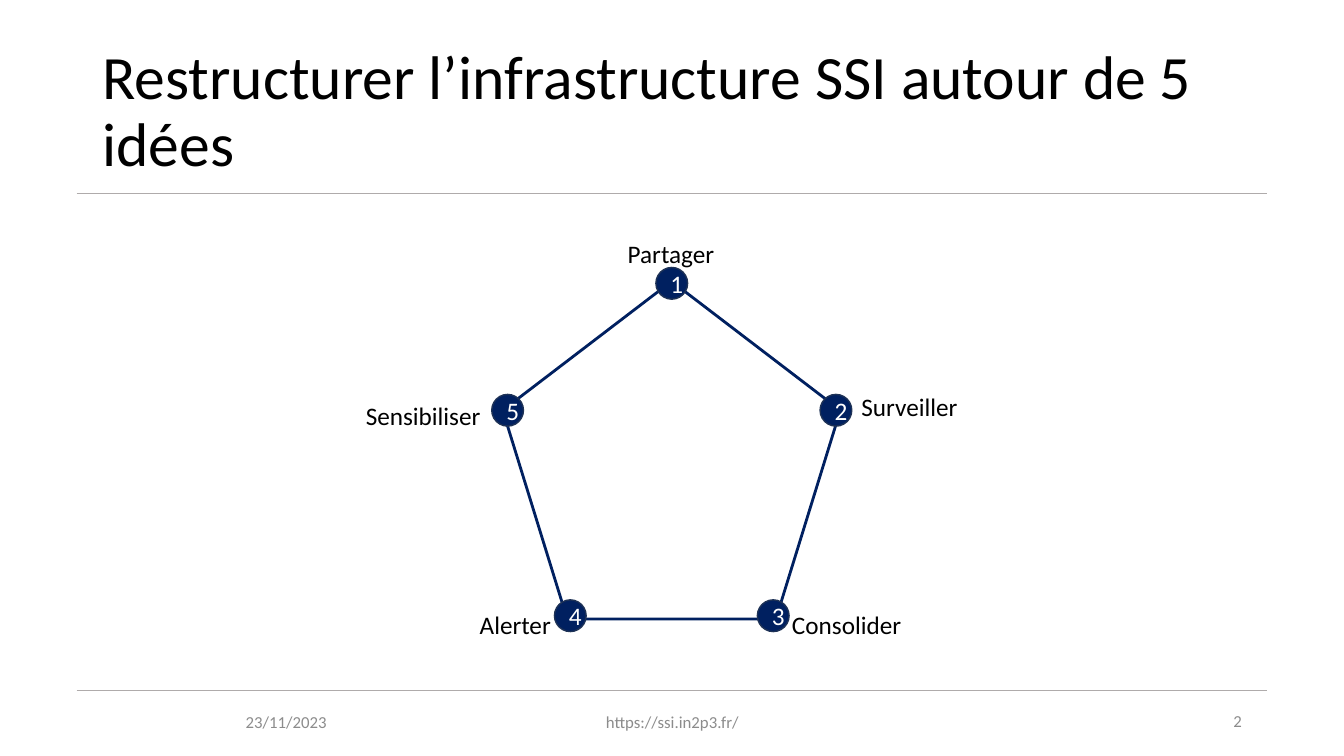
import math
from dataclasses import dataclass

from lxml import etree
from pptx import Presentation
from pptx import util as u
from pptx.dml.color import RGBColor
from pptx.enum import shapes, text
from pptx.oxml.ns import qn


@dataclass(frozen=True)
class Theme:
    font: str = "Calibri"
    ink: str = "000000"
    paper: str = "FFFFFF"
    navy: str = "002060"
    navy_edge: str = "1E3256"
    rule: str = "AFABAB"
    muted: str = "8C8C8C"
    title_size: int = 44
    body_size: int = 18
    footer_size: int = 12


class SlideBuilder:
    def __init__(self, prs, theme):
        self.theme = theme
        self.slide = prs.slides.add_slide(prs.slide_layouts[5])

    def set_text(self, sp, content, size, color, align=text.PP_ALIGN.LEFT,
                 anchor=text.MSO_ANCHOR.MIDDLE, wrap=True):
        tf = sp.text_frame
        tf.text = content
        tf.word_wrap = wrap
        tf.vertical_anchor = anchor
        p = tf.paragraphs[0]
        p.alignment = align
        font = p.runs[0].font
        font.name = self.theme.font
        font.size = u.Pt(size)
        font.color.rgb = RGBColor.from_string(color)
        return p

    def title(self, content, left, top, width, height):
        sp = self.slide.shapes.title
        sp.left, sp.top, sp.width, sp.height = map(u.Cm, (left, top, width, height))
        p = self.set_text(sp, content, self.theme.title_size, self.theme.ink)
        sp.text_frame.auto_size = text.MSO_AUTO_SIZE.NONE
        p.line_spacing = 0.9

    def rule(self, left, right, y):
        line = self.slide.shapes.add_connector(
            shapes.MSO_CONNECTOR.STRAIGHT, *map(u.Cm, (left, y, right, y)))
        line.line.color.rgb = RGBColor.from_string(self.theme.rule)
        line.line.width = u.Pt(1)
        etree.SubElement(line._element.spPr, qn("a:effectLst"))

    def shape(self, kind, left, top, width, height, fill, edge, weight):
        sp = self.slide.shapes.add_shape(kind, *map(u.Cm, (left, top, width, height)))
        sp.shadow.inherit = False
        sp.fill.solid()
        sp.fill.fore_color.rgb = RGBColor.from_string(fill)
        sp.line.color.rgb = RGBColor.from_string(edge)
        sp.line.width = u.Pt(weight)
        return sp

    def node(self, number, x, y, size=0.8):
        """Draw a numbered disc centred on (x, y)."""
        sp = self.shape(shapes.MSO_SHAPE.OVAL, x - size / 2, y - size / 2, size, size,
                        self.theme.navy, self.theme.navy_edge, 1)
        self.set_text(sp, str(number), self.theme.body_size, self.theme.paper,
                      text.PP_ALIGN.CENTER)

    def label(self, content, left, top, width):
        sp = self.slide.shapes.add_textbox(*map(u.Cm, (left, top, width, 1.02)))
        self.set_text(sp, content, self.theme.body_size, self.theme.ink,
                      anchor=text.MSO_ANCHOR.TOP, wrap=False)
        sp.text_frame.auto_size = text.MSO_AUTO_SIZE.SHAPE_TO_FIT_TEXT

    def footer(self, content, left, top, width, align):
        sp = self.slide.shapes.add_textbox(*map(u.Cm, (left, top, width, 1.02)))
        self.set_text(sp, content, self.theme.footer_size, self.theme.muted, align)


def main():
    prs = Presentation()
    prs.slide_width, prs.slide_height = u.Cm(33.87), u.Cm(19.05)
    theme = Theme()
    s = SlideBuilder(prs, theme)

    for y in (17.4, 4.88):
        s.rule(1.93, 31.93, y)
    s.title("Restructurer l’infrastructure SSI autour de 5 idées", 2.33, 1.01, 29.21, 3.68)

    s.shape(shapes.MSO_SHAPE.REGULAR_PENTAGON, 12.67, 7.09, 8.51, 8.51,
            theme.paper, theme.navy, 2)

    ideas = [  # label, left, top, width
        ("Partager", 15.57, 5.89, 2.72),
        ("Surveiller", 21.46, 9.73, 2.97),
        ("Consolider", 19.71, 15.24, 3.3),
        ("Alerter", 11.84, 15.24, 2.31),
        ("Sensibiliser", 8.97, 9.96, 3.43),
    ]
    center_x, center_y, radius_x, radius_y = 16.93, 11.77, 4.35, 4.63
    for i, idea in enumerate(ideas):
        angle = math.tau * i / len(ideas)
        s.label(*idea)
        s.node(i + 1, center_x + radius_x * math.sin(angle),
               center_y - radius_y * math.cos(angle))

    s.footer("23/11/2023", 5.94, 17.68, 4.6, text.PP_ALIGN.LEFT)
    s.footer("https://ssi.in2p3.fr/", 11.23, 17.68, 11.43, text.PP_ALIGN.CENTER)
    s.footer("2", 23.93, 17.65, 7.62, text.PP_ALIGN.RIGHT)

    prs.save("out.pptx")


if __name__ == "__main__":
    main()
